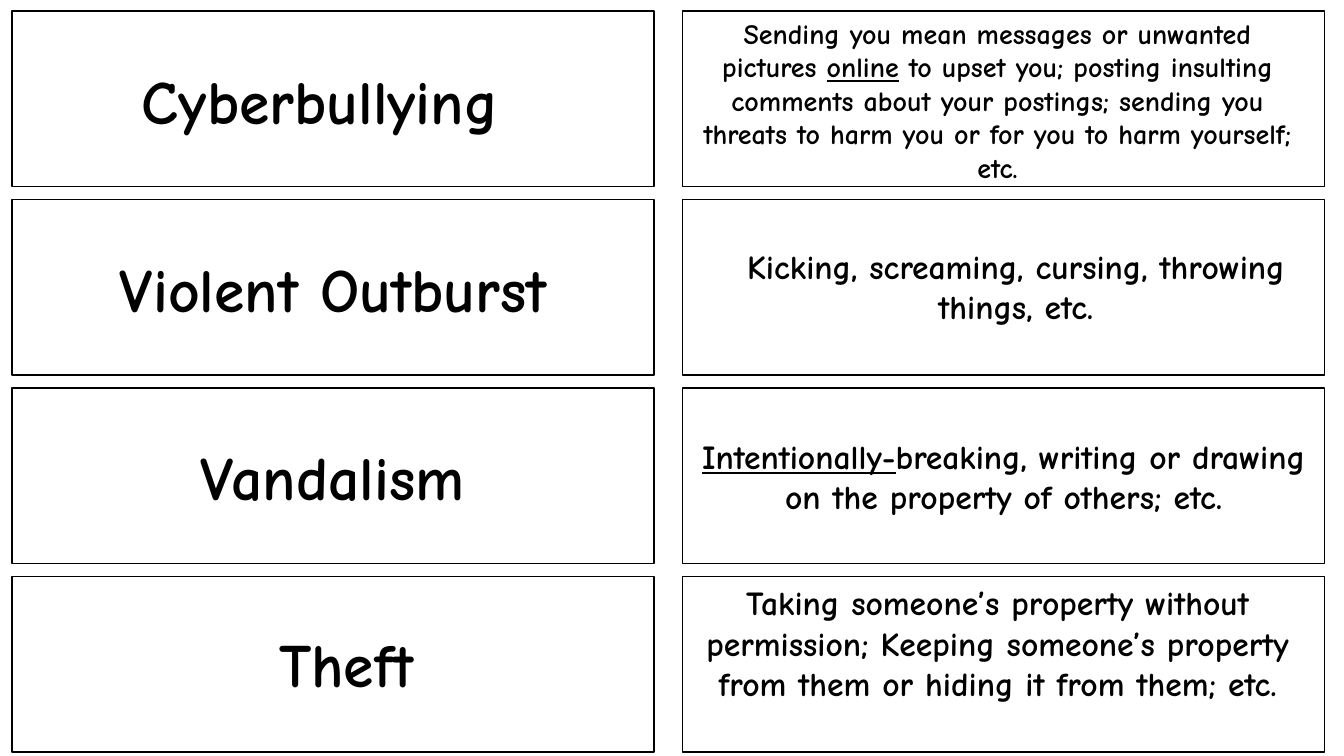
"""Build a slide of matching cards: behaviours on the left, meanings on the right."""
import pptx
import pptx.dml.color
import pptx.enum.shapes
import pptx.enum.text
import pptx.util

Cm = pptx.util.Cm
Pt = pptx.util.Pt


def color(hex_code):
    return pptx.dml.color.RGBColor.from_string(hex_code)


def write(shape, spans, size):
    frame = shape.text_frame
    frame.word_wrap = True
    para = frame.paragraphs[0]
    para.alignment = pptx.enum.text.PP_ALIGN.CENTER
    for text, underlined in spans:
        span = para.add_run()
        span.text = text
        span.font.name = "Comic Neue"
        span.font.size = Pt(size)
        span.font.bold = True
        span.font.underline = underlined
        span.font.color.rgb = color("000000")


deck = pptx.Presentation()
deck.slide_width = Cm(33.87)
deck.slide_height = Cm(19.05)
page = deck.slides.add_slide(deck.slide_layouts[6])

CARD_LEFTS = (0.3, 17.2)
CARD_TOP, CARD_PITCH = 0.28, 4.75
CARD_WIDTH, CARD_HEIGHT = 16.18, 4.42

cards = {}
for column, left in enumerate(CARD_LEFTS):
    for row in range(4):
        card = page.shapes.add_shape(
            pptx.enum.shapes.MSO_SHAPE.RECTANGLE,
            Cm(left), Cm(CARD_TOP + row * CARD_PITCH), Cm(CARD_WIDTH), Cm(CARD_HEIGHT))
        card.shadow.inherit = False
        card.fill.solid()
        card.fill.fore_color.rgb = color("FFFFFF")
        card.line.color.rgb = color("000000")
        card.line.width = Pt(1)
        card.text_frame.vertical_anchor = pptx.enum.text.MSO_ANCHOR.MIDDLE
        cards[column, row] = card

write(cards[0, 2], [("Vandalism", False)], 44)
write(cards[1, 2], [
    ("Intentionally-", True),
    ("breaking, writing or drawing on the property of others; etc.", False),
], 24)

text_boxes = [
    (0.3, 1.47, 15.54, 2.13, 44, [("Cyberbullying", False)]),
    (17.2, 0.28, 15.88, 4.52, 20, [
        ("Sending you mean messages or unwanted pictures ", False),
        ("online", True),
        (" to upset you; posting insulting comments about your postings; "
         "sending you threats to harm you or for you to harm yourself; etc.", False),
    ]),
    (17.83, 6.07, 15.54, 2.31, 24, [
        ("Kicking, screaming, cursing, throwing things, etc.", False)]),
    (0.64, 6.2, 15.54, 2.13, 44, [("Violent Outburst", False)]),
    (0.97, 15.65, 15.54, 2.13, 44, [("Theft", False)]),
    (17.37, 14.55, 15.54, 4.37, 24, [
        ("Taking someone’s property without permission; Keeping someone’s "
         "property from them or hiding it from them; etc.", False)]),
]
for left, top, width, height, size, spans in text_boxes:
    box = page.shapes.add_textbox(Cm(left), Cm(top), Cm(width), Cm(height))
    write(box, spans, size)
    box.text_frame.auto_size = pptx.enum.text.MSO_AUTO_SIZE.SHAPE_TO_FIT_TEXT

deck.save("out.pptx")
